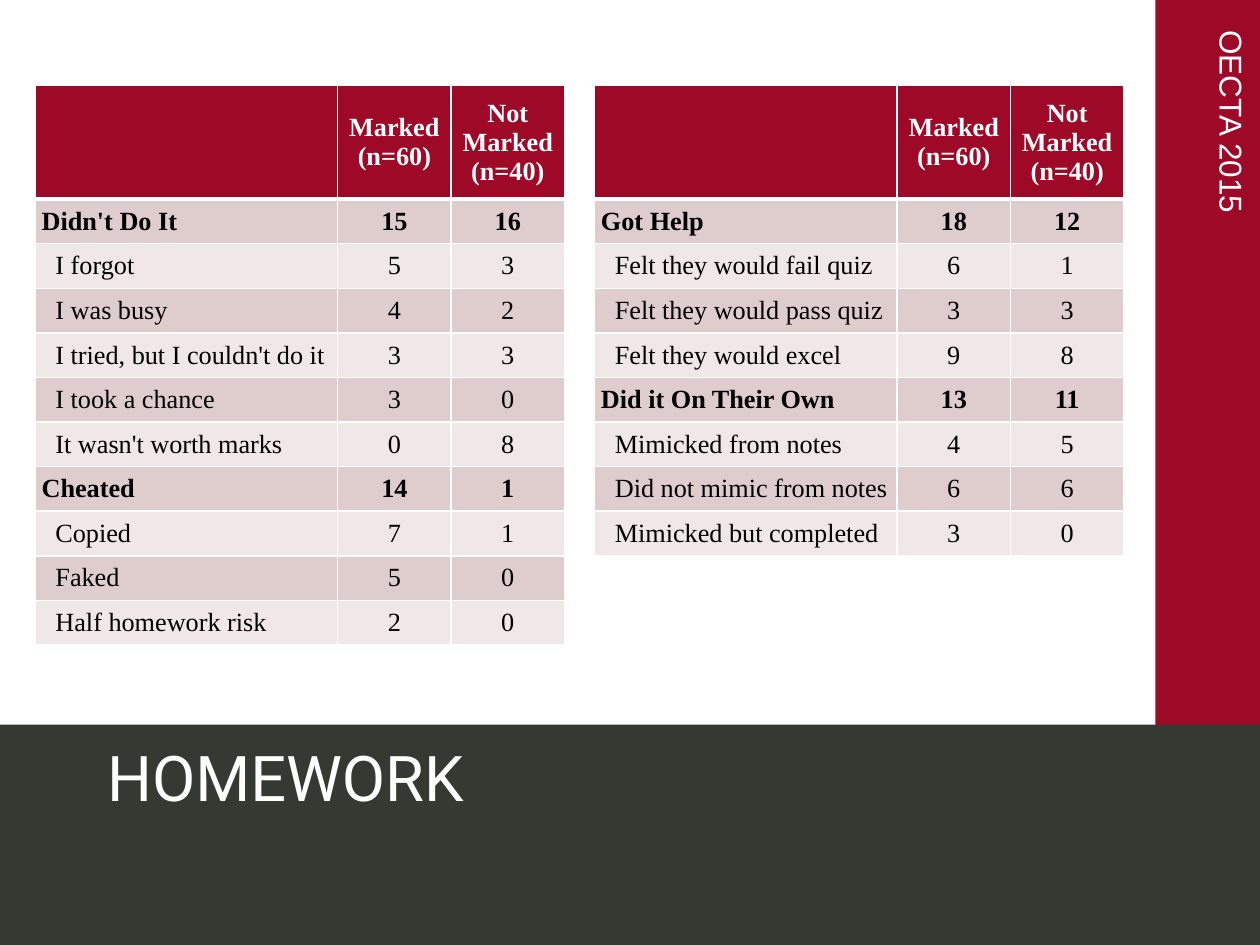
from dataclasses import dataclass

from lxml.etree import SubElement
from pptx import Presentation
from pptx.dml.color import RGBColor
from pptx.enum.shapes import MSO_SHAPE
from pptx.enum.text import MSO_ANCHOR, PP_ALIGN
from pptx.oxml.ns import qn
from pptx.util import Inches, Pt


@dataclass(frozen=True)
class Theme:
    red: str = "9E0927"
    charcoal: str = "363832"
    dark_band: str = "DFCCCD"
    light_band: str = "F0E7E8"
    white: str = "FFFFFF"
    black: str = "000000"
    title_font: str = "Roboto"
    side_font: str = "Arial"
    table_font: str = "Times New Roman"
    title_size: int = 36
    side_size: int = 18
    table_size: int = 15


THEME = Theme()

# Content: each category is (name, marked, not marked, reasons)
TITLE = "HOMEWORK"
EVENT = "OECTA 2015"
HEADERS = ["", "Marked\n(n=60)", "Not Marked\n(n=40)"]
HALVES = [
    [
        ("Didn't Do It", 15, 16, [
            ("I forgot", 5, 3),
            ("I was busy", 4, 2),
            ("I tried, but I couldn't do it", 3, 3),
            ("I took a chance", 3, 0),
            ("It wasn't worth marks", 0, 8),
        ]),
        ("Cheated", 14, 1, [
            ("Copied", 7, 1),
            ("Faked", 5, 0),
            ("Half homework risk", 2, 0),
        ]),
    ],
    [
        ("Got Help", 18, 12, [
            ("Felt they would fail quiz", 6, 1),
            ("Felt they would pass quiz", 3, 3),
            ("Felt they would excel", 9, 8),
        ]),
        ("Did it On Their Own", 13, 11, [
            ("Mimicked from notes", 4, 5),
            ("Did not mimic from notes", 6, 6),
            ("Mimicked but completed", 3, 0),
        ]),
    ],
]

# Layout in inches
SLIDE_W, SLIDE_H = 10, 7.5
SIDEBAR_W, FOOTER_H = 0.83, 1.75
FOOTER_TOP = SLIDE_H - FOOTER_H
TABLE_LEFT, TABLE_TOP, TABLE_H = 0.28, 0.68, 4.44
HALF_COLUMNS, GAP = [2.4, 0.9, 0.9], 0.24
HEADER_H = 0.9
CATEGORY_INDENT, REASON_INDENT, HEADER_INSET = 0.05, 0.16, 0.07
EVENT_W, EVENT_H, EVENT_CENTRE = 3.9, 0.4, (9.78, 1.95)


def style_text(frame, font, size, color, bold=False, align=PP_ALIGN.LEFT):
    frame.vertical_anchor = MSO_ANCHOR.MIDDLE
    for paragraph in frame.paragraphs:
        paragraph.alignment = align
        for run in paragraph.runs:
            run.font.name = font
            run.font.size = Pt(size)
            run.font.bold = bold
            run.font.color.rgb = RGBColor.from_string(color)


def add_band(slide, left, top, width, height, color):
    band = slide.shapes.add_shape(
        MSO_SHAPE.RECTANGLE, *map(Inches, (left, top, width, height)))
    band.shadow.inherit = False
    band.fill.solid()
    band.fill.fore_color.rgb = RGBColor.from_string(color)
    band.line.fill.background()


def set_borders(cell, top=1, bottom=1):
    properties = cell._tc.get_or_add_tcPr()
    for side, points in (("L", 1), ("R", 1), ("T", top), ("B", bottom)):
        line = SubElement(properties, qn(f"a:ln{side}"), w=str(Pt(points)))
        fill = SubElement(line, qn("a:solidFill"))
        SubElement(fill, qn("a:srgbClr"), val=THEME.white)


def fill_cell(cell, text, fill, color, bold, align, indent):
    cell.fill.solid()
    cell.fill.fore_color.rgb = RGBColor.from_string(fill)
    cell.margin_left = Inches(indent)
    cell.text_frame.text = str(text)
    style_text(cell.text_frame, THEME.table_font, THEME.table_size, color, bold, align)
    cell.vertical_anchor = MSO_ANCHOR.MIDDLE


def flatten(categories):
    """Table rows as (values, is_category)."""
    rows = []
    for *totals, reasons in categories:
        rows.append((totals, True))
        rows.extend((reason, False) for reason in reasons)
    return rows


def add_results(slide):
    halves = [flatten(categories) for categories in HALVES]
    widths = HALF_COLUMNS + [GAP] + HALF_COLUMNS
    body_rows = max(map(len, halves))
    table = slide.shapes.add_table(
        body_rows + 1, len(widths), Inches(TABLE_LEFT), Inches(TABLE_TOP),
        Inches(sum(widths)), Inches(TABLE_H)).table
    for column, width in zip(table.columns, widths):
        column.width = Inches(width)
    for r, row in enumerate(table.rows):
        row.height = Inches((TABLE_H - HEADER_H) / body_rows if r else HEADER_H)
        for cell in row.cells:
            cell.margin_left = cell.margin_right = 0
            cell.margin_top = cell.margin_bottom = 0
            set_borders(cell, top=3 if r == 1 else 1, bottom=1 if r else 3)
            cell.fill.background()

    for h, rows in enumerate(halves):
        first = h * (len(HALF_COLUMNS) + 1)
        for c, header in enumerate(HEADERS):
            cell = table.cell(0, first + c)
            fill_cell(cell, header, THEME.red, THEME.white, True,
                      PP_ALIGN.CENTER, HEADER_INSET)
            cell.margin_right = Inches(HEADER_INSET)
        for r, (values, is_category) in enumerate(rows, start=1):
            band = THEME.dark_band if r % 2 else THEME.light_band
            label_indent = CATEGORY_INDENT if is_category else REASON_INDENT
            for c, value in enumerate(values):
                fill_cell(table.cell(r, first + c), value, band, THEME.black, is_category,
                          PP_ALIGN.CENTER if c else PP_ALIGN.LEFT,
                          0 if c else label_indent)


def add_event(slide):
    x, y = EVENT_CENTRE
    event = slide.shapes.add_textbox(
        Inches(x - EVENT_W / 2), Inches(y - EVENT_H / 2), Inches(EVENT_W), Inches(EVENT_H))
    event.rotation = 90
    frame = event.text_frame
    frame.word_wrap = True
    frame.margin_left = Inches(0.24)
    frame.text = EVENT
    style_text(frame, THEME.side_font, THEME.side_size, THEME.white)


def place_title(slide):
    title = slide.shapes.title
    title.left, title.top = Inches(0.75), Inches(FOOTER_TOP)
    title.width, title.height = Inches(8.92), Inches(0.83)
    title.text_frame.text = TITLE
    style_text(title.text_frame, THEME.title_font, THEME.title_size, THEME.white)
    # Bring the title in front of the footer band
    slide.shapes._spTree.append(title._element)


def main():
    deck = Presentation()
    deck.slide_width, deck.slide_height = Inches(SLIDE_W), Inches(SLIDE_H)
    slide = deck.slides.add_slide(deck.slide_layouts[5])
    add_band(slide, SLIDE_W - SIDEBAR_W, 0, SIDEBAR_W, SLIDE_H, THEME.red)
    add_band(slide, 0, FOOTER_TOP, SLIDE_W, FOOTER_H, THEME.charcoal)
    add_event(slide)
    place_title(slide)
    add_results(slide)
    deck.save("out.pptx")


if __name__ == "__main__":
    main()
